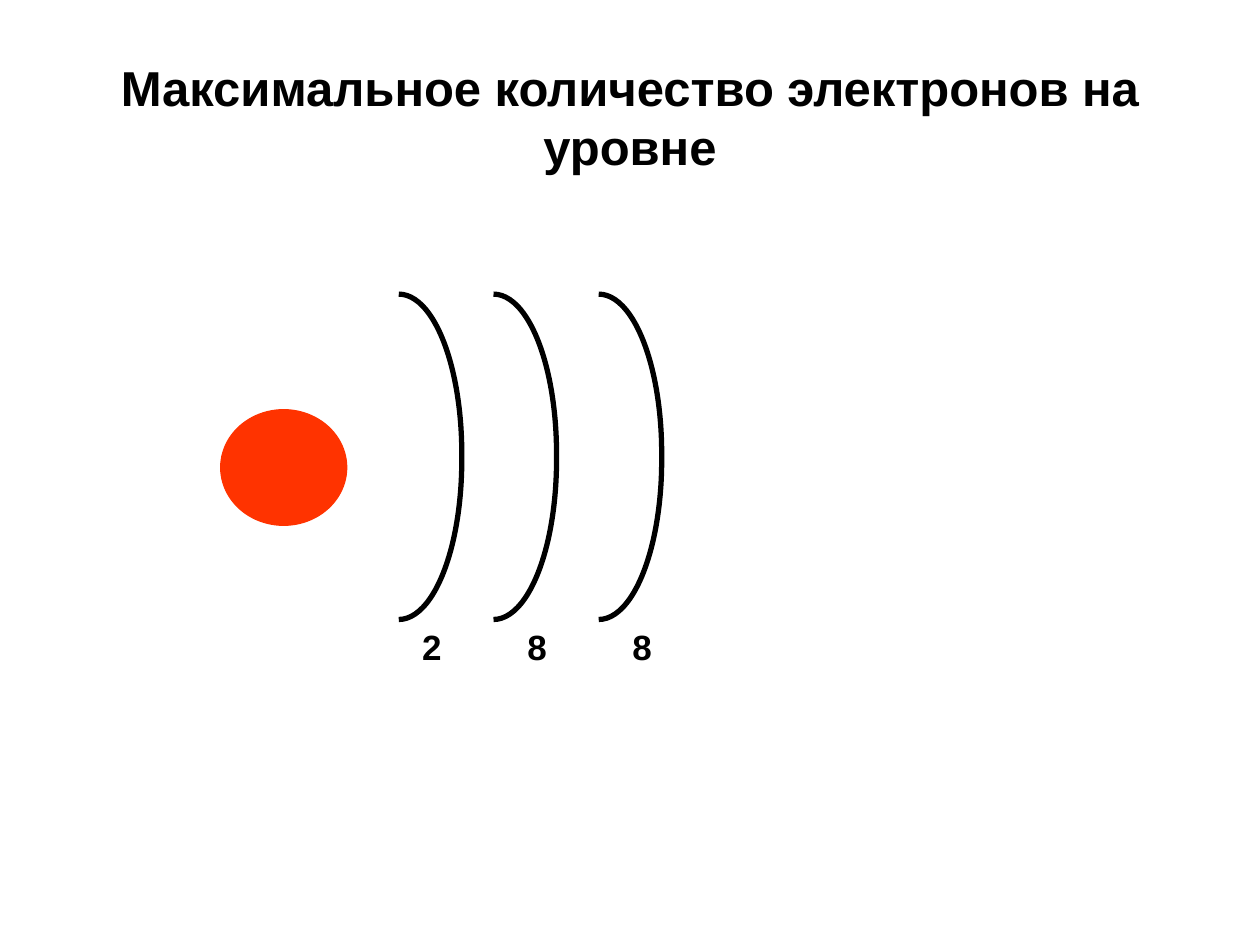
from pptx import Presentation
from pptx import util as u
from pptx.dml.color import RGBColor
from pptx.enum import shapes, text

BLACK = RGBColor(0x00, 0x00, 0x00)
WHITE = RGBColor(0xFF, 0xFF, 0xFF)
NUCLEUS_RED = RGBColor(0xFF, 0x33, 0x00)

LEVEL_TOP, LEVEL_WIDTH, LEVEL_HEIGHT = 5.93, 1.27, 6.56
LABEL_LEFT, LABEL_STEP, LABEL_TOP = 8.26, 2.12, 12.49
# Left edge of each energy level in cm, and its electron count
LEVELS = [(8.04, "2"), (9.95, "8"), (12.07, "8")]


class AtomSlide:
    font_name = "Arial"

    def __init__(self, presentation):
        self.slide = presentation.slides.add_slide(presentation.slide_layouts[5])
        self.slide.background.fill.solid()
        self.slide.background.fill.fore_color.rgb = WHITE

    def format_runs(self, paragraph, size):
        for run in paragraph.runs:
            run.font.name = self.font_name
            run.font.size = u.Pt(size)
            run.font.bold = True
            run.font.color.rgb = BLACK

    def title(self, wording, left, top, width, height):
        shape = self.slide.shapes.title
        shape.left, shape.top = u.Cm(left), u.Cm(top)
        shape.width, shape.height = u.Cm(width), u.Cm(height)
        frame = shape.text_frame
        frame.text = wording
        frame.word_wrap = True
        frame.auto_size = text.MSO_AUTO_SIZE.NONE
        frame.vertical_anchor = text.MSO_ANCHOR.MIDDLE
        frame.paragraphs[0].alignment = text.PP_ALIGN.CENTER
        self.format_runs(frame.paragraphs[0], 28)

    def nucleus(self, left, top, width, height):
        shape = self.slide.shapes.add_shape(
            shapes.MSO_SHAPE.OVAL, u.Cm(left), u.Cm(top), u.Cm(width), u.Cm(height))
        shape.shadow.inherit = False
        shape.fill.solid()
        shape.fill.fore_color.rgb = NUCLEUS_RED
        shape.line.color.rgb = NUCLEUS_RED
        shape.line.width = u.Pt(0.75)

    def level(self, left, label_left, electrons):
        """Group the arc of one energy level with its electron count."""
        group = self.slide.shapes.add_group_shape()
        arc = group.shapes.add_shape(
            shapes.MSO_SHAPE.RIGHT_BRACKET, u.Cm(left), u.Cm(LEVEL_TOP),
            u.Cm(LEVEL_WIDTH), u.Cm(LEVEL_HEIGHT))
        arc.adjustments[0] = 2.53
        arc.shadow.inherit = False
        arc.fill.background()
        arc.line.color.rgb = BLACK
        arc.line.width = u.Pt(3)

        label = group.shapes.add_textbox(
            u.Cm(label_left), u.Cm(LABEL_TOP), u.Cm(1.06), u.Cm(1.1))
        frame = label.text_frame
        frame.text = electrons
        frame.word_wrap = True
        frame.auto_size = text.MSO_AUTO_SIZE.SHAPE_TO_FIT_TEXT
        self.format_runs(frame.paragraphs[0], 20)


def main():
    presentation = Presentation()
    presentation.slide_width, presentation.slide_height = u.Cm(25.4), u.Cm(19.05)
    atom = AtomSlide(presentation)
    atom.title("Максимальное количество электронов на уровне", 1.27, 0.76, 22.86, 3.18)
    atom.nucleus(4.45, 8.26, 2.54, 2.33)
    for index, (left, electrons) in enumerate(LEVELS):
        atom.level(left, LABEL_LEFT + index * LABEL_STEP, electrons)
    presentation.save("out.pptx")


if __name__ == "__main__":
    main()
